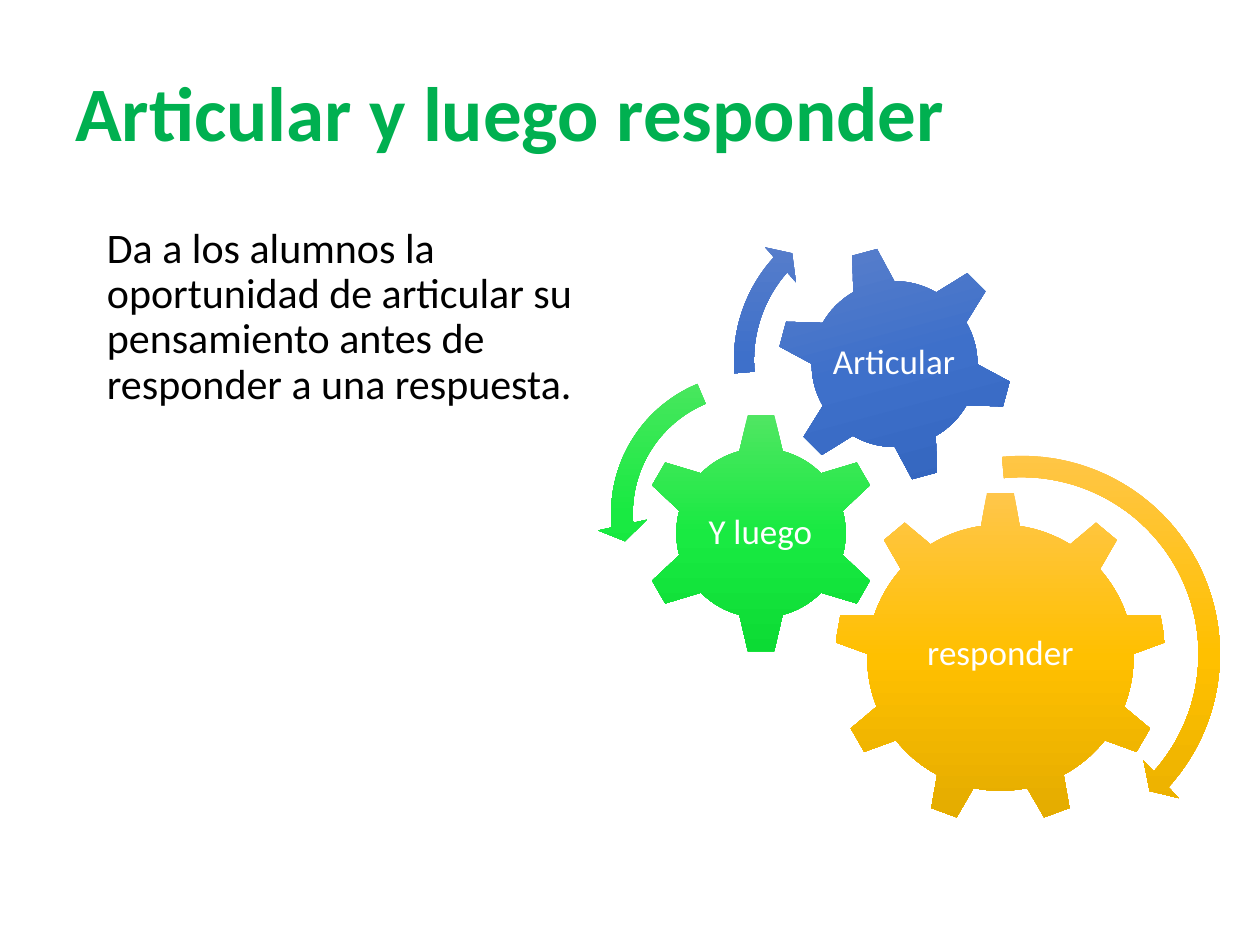
from pptx import Presentation
from pptx.dml.color import RGBColor
from pptx.enum.shapes import MSO_SHAPE
from pptx.enum.text import MSO_ANCHOR, PP_ALIGN
from pptx.oxml import parse_xml
from pptx.oxml.ns import nsdecls
from pptx.util import Inches, Pt

GEAR_6, GEAR_9 = MSO_SHAPE.GEAR_6, MSO_SHAPE.GEAR_9
ARROW, LEFT_ARROW = MSO_SHAPE.CIRCULAR_ARROW, MSO_SHAPE.LEFT_CIRCULAR_ARROW
TOP, MIDDLE = MSO_ANCHOR.TOP, MSO_ANCHOR.MIDDLE
LEFT, CENTER = PP_ALIGN.LEFT, PP_ALIGN.CENTER

AMBER = ("FFC64B", "FFC000", "E3AB00")
GREEN = ("51E663", "19EA42", "0CDB34")
BLUE = ("6183CB", "3E70CA", "3062BB")

TITLE = "Articular y luego responder"
BODY = ("Da a los alumnos la oportunidad de articular su pensamiento "
        "antes de responder a una respuesta.")
GEARS = [
    ("responder", GEAR_9, (6.62, 3.9, 2.64), 0, (7.15, 4.51, 1.58, 1.36), AMBER),
    ("Y luego", GEAR_6, (5.08, 3.27, 1.92), 0, (5.56, 3.76, 0.95, 0.95), GREEN),
    ("Articular", GEAR_6, (6.16, 1.95, 1.88), 345, (6.57, 2.36, 1.05, 1.05), BLUE),
]
ARROWS = [
    (ARROW, (6.42, 3.5, 3.38), (0.05, 2.99, 25.21, 158.52, 0.06), AMBER),
    (LEFT_ARROW, (4.74, 2.85, 2.45), (0.07, 4.3, 104.89, 148.38, 0.08), GREEN),
    (ARROW, (5.72, 1.54, 2.64), (0.06, 3.94, 133.14, 105.08, 0.07), BLUE),
]


def rgb(value):
    return RGBColor.from_string(value)


def add_text(s, text, box, size, color, anchor=MIDDLE, align=LEFT,
             inset=None, bold=False, before=0, indent=0):
    tf = s.shapes.add_textbox(*map(Inches, box)).text_frame
    frame = {"word_wrap": True, "vertical_anchor": anchor}
    if inset is not None:
        for side in ("left", "top", "right", "bottom"):
            frame[f"margin_{side}"] = Inches(inset)
    p = tf.paragraphs[0]
    r = p.add_run()
    r.text = text
    paragraph = {"alignment": align, "line_spacing": 0.9, "space_before": Pt(before)}
    font = {"name": "Calibri", "size": Pt(size), "bold": bold}
    for target, values in ((tf, frame), (p, paragraph), (r.font, font)):
        for name, value in values.items():
            setattr(target, name, value)
    r.font.color.rgb = rgb(color)
    if indent:
        p._p.get_or_add_pPr().set("marL", str(Inches(indent)))


def add_gradient_shape(s, kind, square, colors, rotation=0, adjustments=()):
    x, y, side = map(Inches, square)
    sp = s.shapes.add_shape(kind, x, y, side, side)
    sp.rotation = rotation
    for i, value in enumerate(adjustments):
        sp.adjustments[i] = value
    stops = "".join(
        f'<a:gs pos="{i * 50000}"><a:srgbClr val="{rgb(color)}"/></a:gs>'
        for i, color in enumerate(colors))
    sp._element.spPr.append(parse_xml(
        f'<a:gradFill {nsdecls("a")} rotWithShape="1"><a:gsLst>{stops}</a:gsLst>'
        '<a:lin ang="5400000" scaled="0"/></a:gradFill>'))
    sp.line.fill.background()
    sp.shadow.inherit = False


def main():
    prs = Presentation()
    prs.slide_width, prs.slide_height = Inches(10), Inches(7.5)
    s = prs.slides.add_slide(prs.slide_layouts[6])
    add_text(s, TITLE, (0.5, 0.3, 9, 1.25), 44, "00B050", bold=True)
    add_text(s, BODY, (0.5, 1.75, 4.42, 4.95), 24, "000000",
             anchor=TOP, before=10, indent=0.25)
    for label, kind, square, rotation, box, colors in GEARS:
        add_gradient_shape(s, kind, square, colors, rotation)
        add_text(s, label, box, 20, "FFFFFF", align=CENTER, inset=0.03)
    for kind, square, adjustments, colors in ARROWS:
        add_gradient_shape(s, kind, square, colors, adjustments=adjustments)
    prs.save("out.pptx")


if __name__ == "__main__":
    main()
